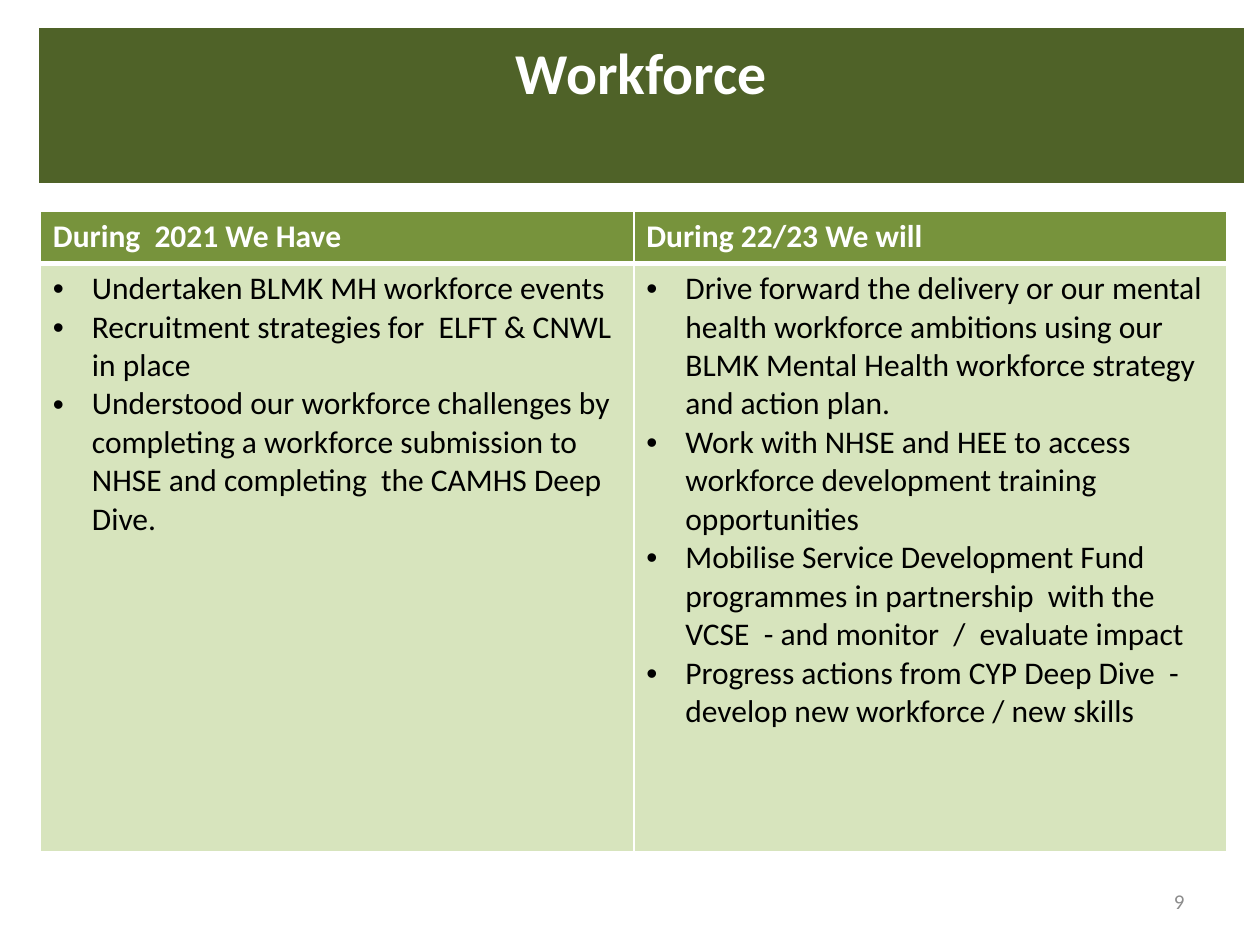
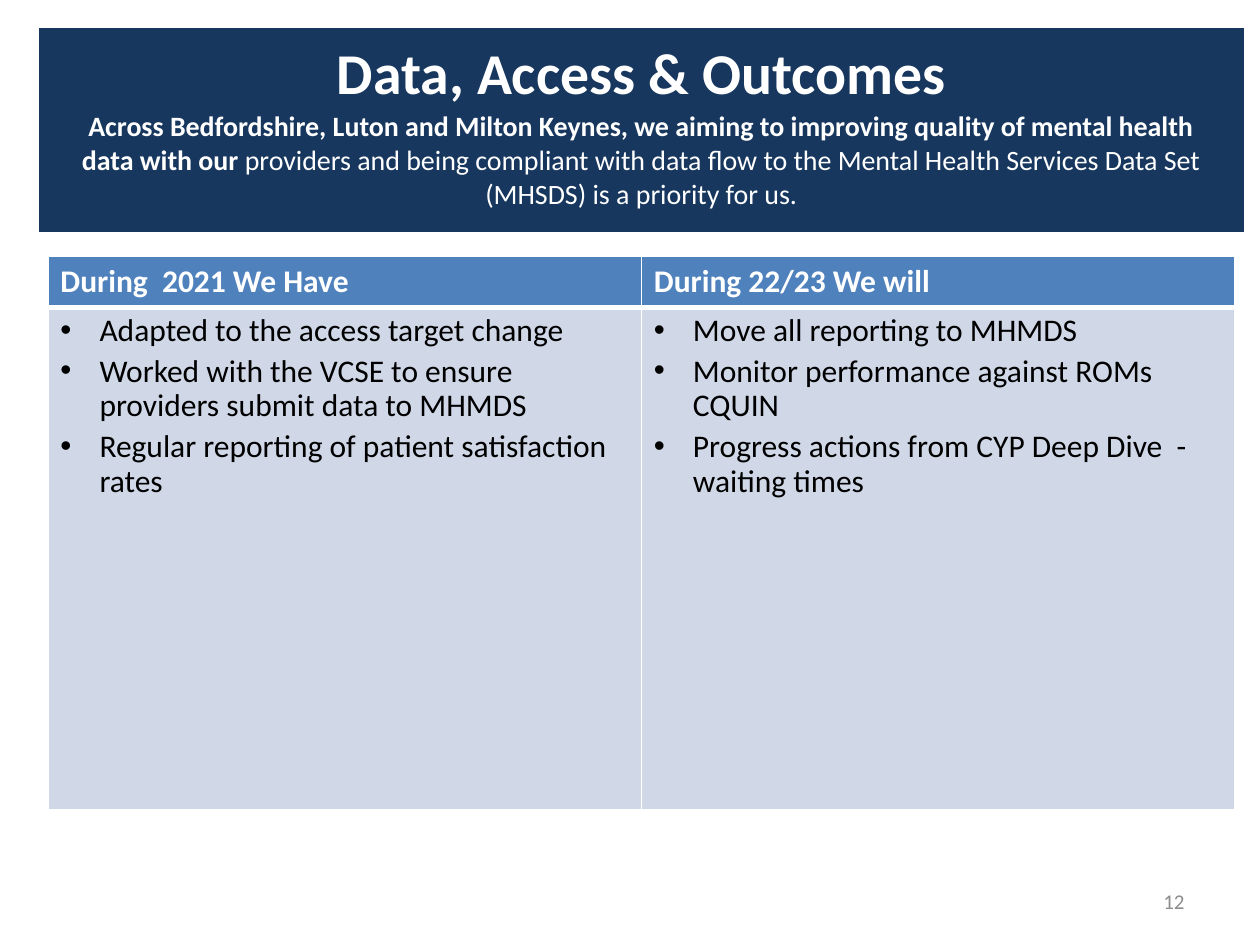
from lxml import etree
from pptx import Presentation
from pptx.dml.color import RGBColor
from pptx.enum.text import MSO_ANCHOR, PP_ALIGN
from pptx.oxml.ns import qn
from pptx.util import Emu, Inches, Pt

CENTER, LEFT, RIGHT = PP_ALIGN.CENTER, PP_ALIGN.LEFT, PP_ALIGN.RIGHT
MIDDLE = MSO_ANCHOR.MIDDLE
COLUMNS, ROWS = 20, 15
FONT = "Calibri"
WHITE, BLACK, GREY = "FFFFFF", "000000", "8C8C8C"
THIN, THICK = 1, 3
BULLET_INDENT = Inches(0.31)
HEADINGS = ["During  2021 We Have", "During 22/23 We will"]
HEADING_ROWS = 0.82


def color(value):
    return RGBColor.from_string(value)


class Style:
    def __init__(self, deck):
        self.deck = deck
        self.page = None

    def new_page(self):
        self.page = self.deck.slides.add_slide(self.deck.slide_layouts[6])

    def across(self, columns):
        return Emu(round(self.deck.slide_width * columns / COLUMNS))

    def down(self, rows):
        return Emu(round(self.deck.slide_height * rows / ROWS))

    def span(self, para, text, size, tint, bold=False):
        span = para.add_run()
        span.text = text
        span.font.name = FONT
        span.font.size = Pt(size)
        span.font.bold = bold
        span.font.color.rgb = color(tint)

    def paragraph(self, frame, index, align=LEFT):
        para = frame.add_paragraph() if index else frame.paragraphs[0]
        para.alignment = align
        return para

    def bullets(self, frame, items, line_spacing, gap):
        for index, item in enumerate(items):
            para = self.paragraph(frame, index)
            para.line_spacing = line_spacing
            para.space_before = Pt(gap if index else 0)
            properties = para._p.get_or_add_pPr()
            properties.set("marL", str(BULLET_INDENT))
            properties.set("indent", str(-BULLET_INDENT))
            etree.SubElement(properties, qn("a:buFont"), typeface="Arial")
            etree.SubElement(properties, qn("a:buChar"), char="•")
            self.span(para, item, 18, BLACK)

    def paint(self, cell, fill, top=THIN, bottom=THIN):
        properties = cell._tc.get_or_add_tcPr()
        sides = {"L": THIN, "R": THIN, "T": top, "B": bottom}
        for side, width in sides.items():
            line = etree.SubElement(properties, qn(f"a:ln{side}"), w=str(Pt(width)))
            solid = etree.SubElement(line, qn("a:solidFill"))
            etree.SubElement(solid, qn("a:srgbClr"), val=WHITE)
        cell.fill.solid()
        cell.fill.fore_color.rgb = color(fill)

    def table(self, left, top, width, heights, columns):
        table = self.page.shapes.add_table(
            len(heights), columns, self.across(left), self.down(top),
            self.across(width), self.down(sum(heights))).table
        table.horz_banding = False
        for row, height in zip(table.rows, heights):
            row.height = self.down(height)
        return table

    def title_band(self, height, fill, title, summary):
        cell = self.table(0.6, 0.44, 19.16, [height], 1).cell(0, 0)
        cell.margin_left = cell.margin_right = Inches(0.18)
        cell.margin_top = cell.margin_bottom = Inches(0.09)
        self.paint(cell, fill, bottom=THICK)
        frame = cell.text_frame
        self.span(self.paragraph(frame, 0, CENTER), title, 33, WHITE, True)
        if summary:
            para = self.paragraph(frame, 1, CENTER)
            for text, bold in summary:
                self.span(para, text, 16, WHITE, bold)

    def comparison(self, left, top, body_rows, heading_fill, body_fill,
                   lists, line_spacing, gap):
        table = self.table(left, top, 18.84, [HEADING_ROWS, body_rows], 2)
        for column, (heading, items) in enumerate(zip(HEADINGS, lists)):
            head, body = table.cell(0, column), table.cell(1, column)
            self.paint(head, heading_fill, bottom=THICK)
            self.paint(body, body_fill, top=THICK)
            self.span(head.text_frame.paragraphs[0], heading, 18, WHITE, True)
            self.bullets(body.text_frame, items, line_spacing, gap)

    def page_number(self, number):
        box = self.page.shapes.add_textbox(
            self.across(14.34), self.down(13.9), self.across(4.66), self.down(0.8))
        frame = box.text_frame
        frame.word_wrap = True
        frame.vertical_anchor = MIDDLE
        para = self.paragraph(frame, 0, RIGHT)
        para.space_after = Pt(6)
        self.span(para, str(number), 12, GREY)


PAGES = [
    {
        "number": 9,
        "band": {"height": 2.5, "fill": "4F6228", "title": "Workforce", "summary": []},
        "comparison": {
            "left": 0.64, "top": 3.36, "body_rows": 9.34,
            "heading_fill": "77933C", "body_fill": "D7E4BD",
            "line_spacing": 1.0, "gap": 0,
            "lists": [
                [
                    "Undertaken BLMK MH workforce events",
                    "Recruitment strategies for  ELFT & CNWL  in place",
                    "Understood our workforce challenges by completing a workforce "
                    "submission to NHSE and completing  the CAMHS Deep Dive.",
                ],
                [
                    "Drive forward the delivery or our mental health workforce ambitions "
                    "using our BLMK Mental Health workforce strategy and action plan.",
                    "Work with NHSE and HEE to access workforce development training "
                    "opportunities",
                    "Mobilise Service Development Fund programmes in partnership  with "
                    "the VCSE  - and monitor  /  evaluate impact",
                    "Progress actions from CYP Deep Dive  - develop new workforce / new skills",
                ],
            ],
        },
    },
    {
        "number": 12,
        "band": {
            "height": 3.28, "fill": "17375E", "title": "Data, Access & Outcomes",
            "summary": [
                ("Across Bedfordshire, Luton and Milton Keynes, we aiming to improving "
                 "quality of mental health data with our ", True),
                ("providers and being compliant with data flow to the Mental Health "
                 "Services Data Set (MHSDS) is a priority for us.", False),
            ],
        },
        "comparison": {
            "left": 0.76, "top": 4.06, "body_rows": 7.98,
            "heading_fill": "4F81BD", "body_fill": "D0D8E8",
            "line_spacing": 0.9, "gap": 3.6,
            "lists": [
                [
                    "Adapted to the access target change",
                    "Worked with the VCSE to ensure providers submit data to MHMDS",
                    "Regular reporting of patient satisfaction rates",
                ],
                [
                    "Move all reporting to MHMDS",
                    "Monitor performance against ROMs CQUIN",
                    "Progress actions from CYP Deep Dive  - waiting times",
                ],
            ],
        },
    },
]


def main():
    deck = Presentation()
    deck.slide_width = Inches(10)
    deck.slide_height = Inches(7.5)
    style = Style(deck)
    for content in PAGES:
        style.new_page()
        style.page_number(content["number"])
        style.title_band(**content["band"])
        style.comparison(**content["comparison"])
    deck.save("out.pptx")


if __name__ == "__main__":
    main()
